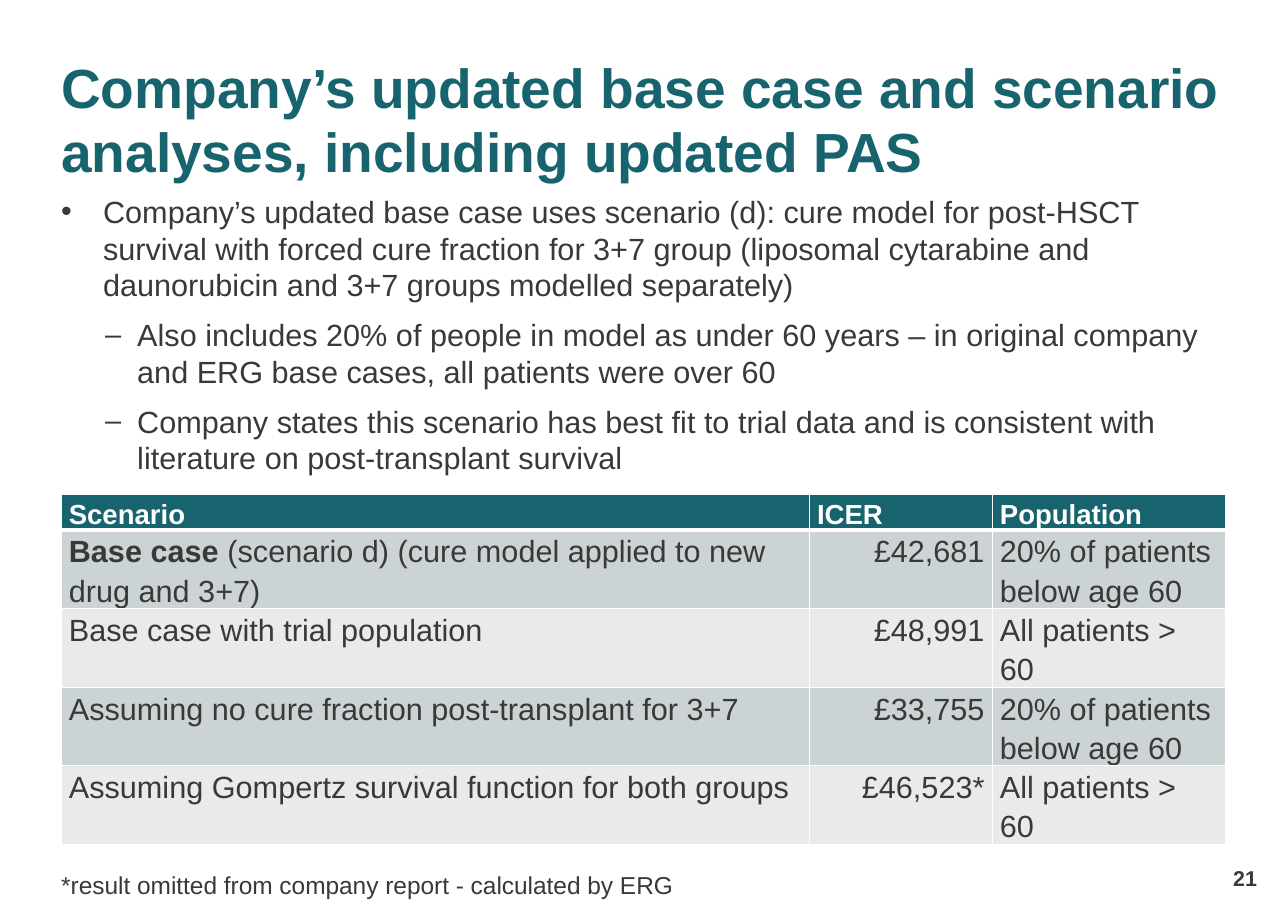
import pptx
import pptx.util
import pptx.dml.color
import pptx.enum.text
import pptx.oxml
import pptx.oxml.ns
from pptx.util import Pt
from pptx.dml.color import RGBColor
from pptx.enum.text import MSO_ANCHOR, MSO_AUTO_SIZE, PP_ALIGN

TEAL = RGBColor(0x18, 0x64, 0x6E)
CHARCOAL = RGBColor(0x39, 0x39, 0x38)
WHITE = RGBColor(0xFF, 0xFF, 0xFF)
BANDS = [RGBColor(0xCC, 0xD3, 0xD5), RGBColor(0xE8, 0xEA, 0xEB)]

TITLE = "Company’s updated base case and scenario analyses, including updated PAS"
POINTS = [
    (0, "Company’s updated base case uses scenario (d): cure model for post-HSCT survival with forced "
        "cure fraction for 3+7 group (liposomal cytarabine and daunorubicin and 3+7 groups modelled separately)"),
    (1, "Also includes 20% of people in model as under 60 years – in original company and ERG base cases, "
        "all patients were over 60"),
    (1, "Company states this scenario has best fit to trial data and is consistent with literature on "
        "post-transplant survival"),
]
BULLETS = [("•", 100, 27.4, -27.4), ("–", 95, 49.7, -20.9)]
HEADINGS = ["Scenario", "ICER", "Population"]
SCENARIOS = [
    ("Base case ", "(scenario d) (cure model applied to new drug and 3+7)", "£42,681", "20% of patients below age 60"),
    ("", "Base case with trial population", "£48,991", "All patients > 60"),
    ("", "Assuming no cure fraction post-transplant for 3+7", "£33,755", "20% of patients below age 60"),
    ("", "Assuming Gompertz survival function for both groups", "£46,523*", "All patients > 60"),
]
FOOTNOTE = "*result omitted from company report - calculated by ERG"
PAGE = "21"

LEFT, WIDTH = 40, 761
COLUMN_WIDTHS = [489, 119.5, 152.5]
HEADING_HEIGHT, SCENARIO_HEIGHT = 23, 51


def write(paragraph, text, *, size=20, color=CHARCOAL, bold=False, align=PP_ALIGN.LEFT, spacing=None):
    paragraph.alignment = align
    paragraph.line_spacing = spacing
    run = paragraph.add_run()
    run.text = text
    run.font.name = "Arial"
    run.font.size = Pt(size)
    run.font.bold = bold
    run.font.color.rgb = color


def prepare(frame, anchor=MSO_ANCHOR.TOP):
    frame.margin_left = frame.margin_top = frame.margin_right = frame.margin_bottom = 0
    frame.word_wrap = True
    frame.auto_size = MSO_AUTO_SIZE.NONE
    frame.vertical_anchor = anchor
    return frame


def add_text(left, top, width, height, anchor=MSO_ANCHOR.TOP):
    box = slide.shapes.add_textbox(Pt(left), Pt(top), Pt(width), Pt(height))
    return prepare(box.text_frame, anchor)


def add_bullet(paragraph, level):
    mark, percent, margin, indent = BULLETS[level]
    properties = paragraph._p.get_or_add_pPr()
    properties.set("marL", str(Pt(margin)))
    properties.set("indent", str(Pt(indent)))
    namespace = pptx.oxml.ns.nsdecls("a")
    for element in (
        f'<a:buClr {namespace}><a:srgbClr val="{CHARCOAL}"/></a:buClr>',
        f'<a:buSzPct {namespace} val="{percent * 1000}"/>',
        f'<a:buFont {namespace} typeface="Arial"/>',
        f'<a:buChar {namespace} char="{mark}"/>',
    ):
        properties.append(pptx.oxml.parse_xml(element))


def fill_cell(cell, color):
    cell.fill.solid()
    cell.fill.fore_color.rgb = color
    cell.margin_left = cell.margin_right = Pt(5)
    cell.margin_top = cell.margin_bottom = 0
    return cell.text_frame.paragraphs[0]


def underline_cell(cell):
    cell._tc.get_or_add_tcPr().insert(0, pptx.oxml.parse_xml(
        f'<a:lnB {pptx.oxml.ns.nsdecls("a")} w="{Pt(3)}"><a:solidFill>'
        f'<a:srgbClr val="{WHITE}"/></a:solidFill></a:lnB>'))


presentation = pptx.Presentation()
presentation.slide_width, presentation.slide_height = Pt(841.7), Pt(595.4)
slide = presentation.slides.add_slide(presentation.slide_layouts[5])

title = slide.shapes.title
title.left, title.top, title.width, title.height = Pt(LEFT), Pt(36), Pt(WIDTH), Pt(60.5)
write(prepare(title.text_frame).paragraphs[0], TITLE, size=36, color=TEAL, bold=True, spacing=Pt(42))

points = add_text(LEFT, 126, WIDTH, 191)
for index, (level, point) in enumerate(POINTS):
    paragraph = points.add_paragraph() if index else points.paragraphs[0]
    paragraph.level = level
    if index:
        paragraph.space_before = Pt(8.5)
    add_bullet(paragraph, level)
    write(paragraph, point)

table = slide.shapes.add_table(
    len(SCENARIOS) + 1, len(HEADINGS), Pt(LEFT), Pt(323.3), Pt(WIDTH),
    Pt(HEADING_HEIGHT + SCENARIO_HEIGHT * len(SCENARIOS))).table
for column, width in zip(table.columns, COLUMN_WIDTHS):
    column.width = Pt(width)
for index, row in enumerate(table.rows):
    row.height = Pt(SCENARIO_HEIGHT if index else HEADING_HEIGHT)

for column, heading in enumerate(HEADINGS):
    cell = table.cell(0, column)
    write(fill_cell(cell, TEAL), heading, size=18, color=WHITE, bold=True, spacing=1.15)
    underline_cell(cell)

for row, (lead, scenario, icer, population) in enumerate(SCENARIOS, 1):
    band = BANDS[(row - 1) % 2]
    name, value, group = [fill_cell(table.cell(row, column), band) for column in range(len(HEADINGS))]
    if lead:
        write(name, lead, bold=True, spacing=1.15)
    write(name, scenario, spacing=1.15)
    write(value, icer, align=PP_ALIGN.RIGHT, spacing=1.15)
    write(group, population, spacing=1.15)

write(add_text(LEFT, 568.8, 663, 19.5).paragraphs[0], FOOTNOTE, size=16)
write(add_text(782, 556, 39.5, 26, MSO_ANCHOR.BOTTOM).paragraphs[0], PAGE,
      size=14, bold=True, align=PP_ALIGN.RIGHT)

presentation.save("out.pptx")
